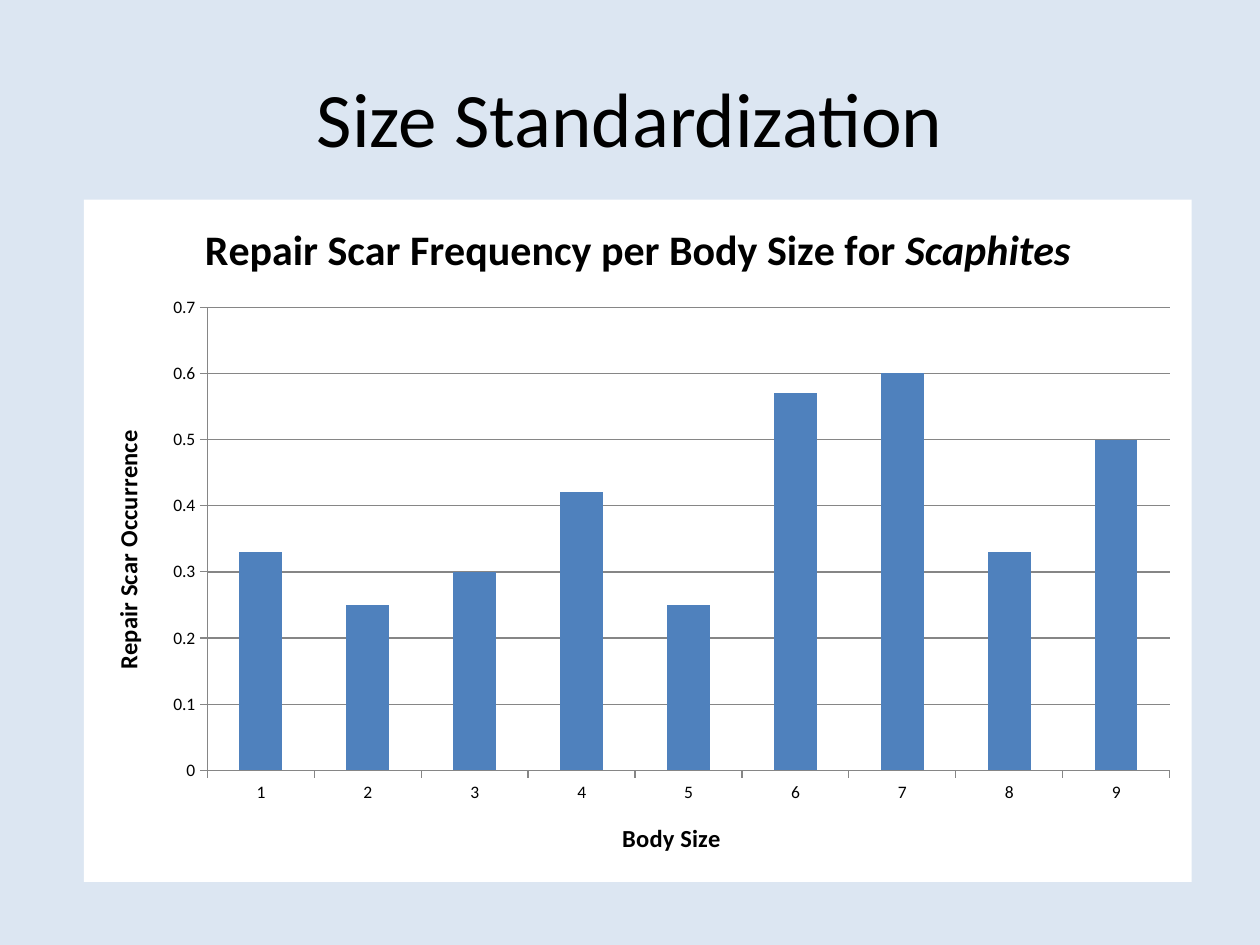
from lxml.etree import fromstring
from pptx import Presentation
from pptx.chart.data import CategoryChartData
from pptx.dml.color import RGBColor
from pptx.enum.chart import XL_CHART_TYPE, XL_TICK_MARK
from pptx.enum.text import MSO_ANCHOR, PP_ALIGN
from pptx.util import Pt

SCAR_FREQUENCY = [0.33, 0.25, 0.3, 0.42, 0.25, 0.57, 0.6, 0.33, 0.5]


def rgb(color):
    return RGBColor.from_string(color)


def fill_chart_area(chart, color):
    """Give the chart area a solid fill and no outline."""
    sp_pr = fromstring(
        '<c:spPr xmlns:c="http://schemas.openxmlformats.org/drawingml/2006/chart"'
        ' xmlns:a="http://schemas.openxmlformats.org/drawingml/2006/main">'
        f'<a:solidFill><a:srgbClr val="{color}"/></a:solidFill>'
        '<a:ln><a:noFill/></a:ln></c:spPr>')
    chart.element.find("{*}chart").addnext(sp_pr)


class Deck:
    """Holds the style and the current slide."""
    font = "Calibri"
    ink = "000000"
    background = "DCE6F2"
    panel = "FFFFFF"
    bar = "4F81BD"
    line = "868686"

    def __init__(self, prs):
        self.s = prs.slides.add_slide(prs.slide_layouts[6])
        fill = self.s.background.fill
        fill.solid()
        fill.fore_color.rgb = rgb(self.background)

    def style(self, font, size, bold=False):
        font.name = self.font
        font.size = Pt(size)
        font.bold = bold
        font.color.rgb = rgb(self.ink)

    def title(self, text, x, y, w, h):
        tf = self.s.shapes.add_textbox(Pt(x), Pt(y), Pt(w), Pt(h)).text_frame
        tf.word_wrap = True
        tf.vertical_anchor = MSO_ANCHOR.MIDDLE
        tf.text = text
        p = tf.paragraphs[0]
        p.alignment = PP_ALIGN.CENTER
        self.style(p.runs[0].font, 44)

    def axis(self, axis, title):
        axis.axis_title.text_frame.text = title
        self.style(axis.axis_title.text_frame.paragraphs[0].runs[0].font, 14, True)
        axis.major_tick_mark = XL_TICK_MARK.OUTSIDE
        axis.minor_tick_mark = XL_TICK_MARK.NONE
        self.rule(axis.format.line)

    def rule(self, line):
        line.color.rgb = rgb(self.line)
        line.width = Pt(0.75)

    def column_chart(self, values, title, italic, x_title, y_title, x, y, w, h):
        """Add a column chart whose title ends in an italic word."""
        data = CategoryChartData()
        data.categories = [str(n) for n in range(1, len(values) + 1)]
        data.add_series("Series 1", values)
        chart = self.s.shapes.add_chart(
            XL_CHART_TYPE.COLUMN_CLUSTERED, Pt(x), Pt(y), Pt(w), Pt(h), data).chart
        self.style(chart.font, 10)
        fill_chart_area(chart, self.panel)
        chart.has_legend = False

        p = chart.chart_title.text_frame.paragraphs[0]
        for text in (title, italic):
            r = p.add_run()
            r.text = text
            self.style(r.font, 24, True)
            r.font.italic = text == italic
        chart.chart_title.include_in_layout = False

        self.axis(chart.category_axis, x_title)
        self.axis(chart.value_axis, y_title)
        chart.value_axis.minimum_scale = 0
        chart.value_axis.maximum_scale = 0.7
        chart.value_axis.major_unit = 0.1
        chart.value_axis.has_major_gridlines = True
        self.rule(chart.value_axis.major_gridlines.format.line)

        plot = chart.plots[0]
        plot.gap_width = 150
        plot.vary_by_categories = False
        fill = plot.series[0].format.fill
        fill.solid()
        fill.fore_color.rgb = rgb(self.bar)


def main():
    prs = Presentation()
    prs.slide_width, prs.slide_height = Pt(720), Pt(540)
    deck = Deck(prs)
    deck.title("Size Standardization", 36, 21.6, 648, 90)
    deck.column_chart(
        SCAR_FREQUENCY, "Repair Scar Frequency per Body Size for ", "Scaphites",
        "Body Size", "Repair Scar Occurrence", 48, 114, 633, 390)
    prs.save("out.pptx")


if __name__ == "__main__":
    main()
